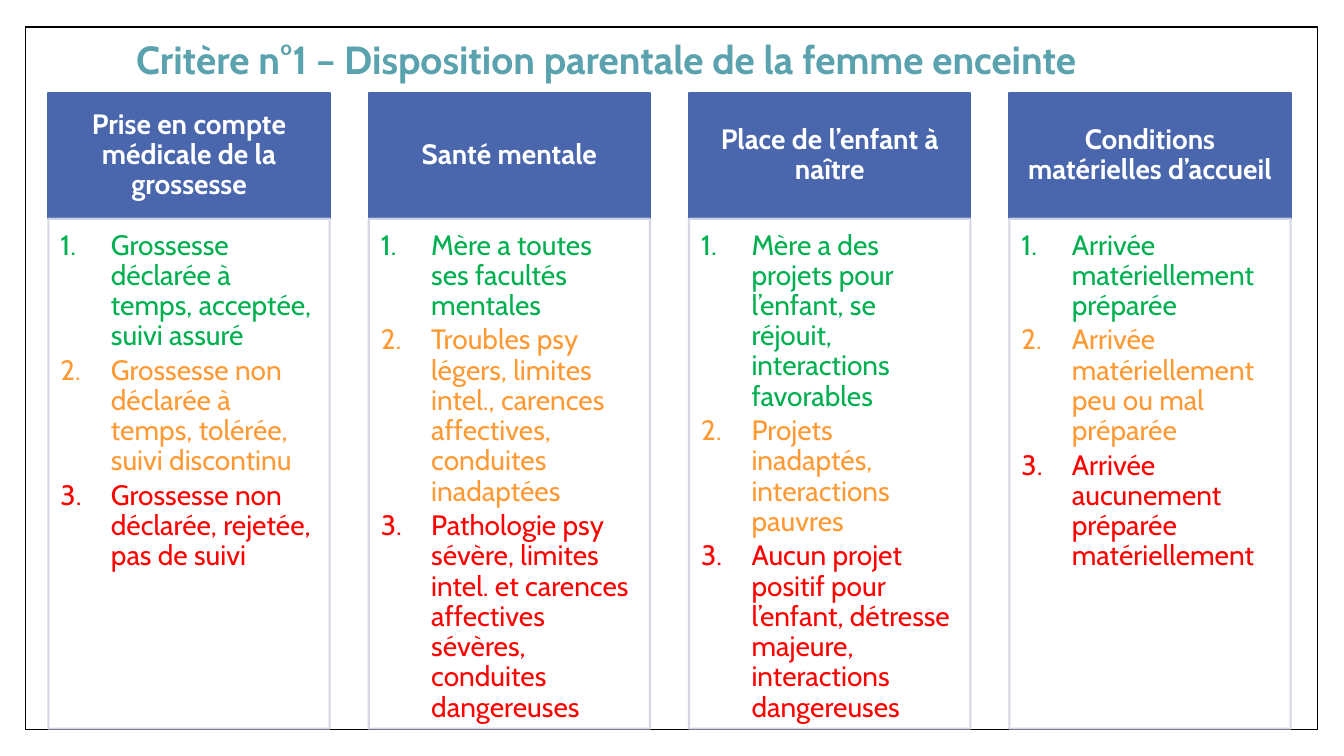
from lxml import etree
from pptx import Presentation
from pptx.dml.color import RGBColor
from pptx.enum.shapes import MSO_SHAPE
from pptx.enum.text import MSO_ANCHOR, MSO_AUTO_SIZE, PP_ALIGN
from pptx.oxml.ns import qn
from pptx.util import Inches, Pt

RECT = MSO_SHAPE.RECTANGLE
TOP, MIDDLE = MSO_ANCHOR.TOP, MSO_ANCHOR.MIDDLE
LEFT, CENTER = PP_ALIGN.LEFT, PP_ALIGN.CENTER

BLUE, PALE, WHITE, TEAL = "4A66AC", "D0D3E3", "FFFFFF", "5AA2AE"
LEVEL_COLORS = ["00B050", "FF9933", "FF0000"]

COLUMNS = [
    ("Prise en compte médicale de la grossesse", [
        "Grossesse déclarée à temps, acceptée, suivi assuré",
        "Grossesse non déclarée à temps, tolérée, suivi discontinu",
        "Grossesse non déclarée, rejetée, pas de suivi"]),
    ("Santé mentale", [
        "Mère a toutes ses facultés mentales",
        "Troubles psy légers, limites intel., carences affectives, conduites inadaptées",
        "Pathologie psy sévère, limites intel. et carences affectives sévères, "
        "conduites dangereuses"]),
    ("Place de l’enfant à naître", [
        "Mère a des projets pour l’enfant, se réjouit, interactions favorables",
        "Projets inadaptés, interactions pauvres",
        "Aucun projet positif pour l’enfant, détresse majeure, interactions dangereuses"]),
    ("Conditions matérielles d’accueil", [
        "Arrivée matériellement préparée",
        "Arrivée matériellement peu ou mal préparée",
        "Arrivée aucunement préparée matériellement"]),
]


def add_box(x, y, w, h, fill, line, weight, anchor=MIDDLE, insets=(0.16, 0.09, 0.16, 0.09)):
    sp = s.shapes.add_shape(RECT, Inches(x), Inches(y), Inches(w), Inches(h))
    sp.shadow.inherit = False
    sp.fill.solid()
    sp.fill.fore_color.rgb = RGBColor.from_string(fill)
    sp.line.color.rgb = RGBColor.from_string(line)
    sp.line.width = Pt(weight)
    tf = sp.text_frame
    tf.word_wrap = True
    tf.vertical_anchor = anchor
    tf.margin_left, tf.margin_top, tf.margin_right, tf.margin_bottom = map(Inches, insets)
    return sp


def write(p, text, size, color, bold, align, after=0):
    p.alignment = align
    p.line_spacing = 0.9
    p.space_after = Pt(after)
    r = p.add_run()
    r.text = text
    r.font.name = "Cabin"
    r.font.size = Pt(size)
    r.font.bold = bold
    r.font.color.rgb = RGBColor.from_string(color)


prs = Presentation()
prs.slide_width, prs.slide_height = Inches(13.33), Inches(7.5)
s = prs.slides.add_slide(prs.slide_layouts[5])

# Title, with the page frame behind it
title = s.shapes.title
title.left, title.top = Inches(1.25), Inches(-0.13)
title.width, title.height = Inches(10.8), Inches(1.48)
tf = title.text_frame
tf.word_wrap = True
tf.auto_size = MSO_AUTO_SIZE.NONE
tf.vertical_anchor = MIDDLE
write(tf.paragraphs[0], "Critère n°1 – Disposition parentale de la femme enceinte",
      28, TEAL, True, LEFT)

frame = add_box(0.25, 0.27, 12.82, 6.97, WHITE, "000000", 1)
title._element.addprevious(frame._element)

# Four criteria: a header over a list graded from green to red
for i, (heading, levels) in enumerate(COLUMNS):
    x = 0.48 + i * 3.177
    header = add_box(x, 0.92, 2.79, 1.24, BLUE, BLUE, 1.5)
    write(header.text_frame.paragraphs[0], heading, 20, WHITE, True, CENTER)

    body = add_box(x, 2.17, 2.79, 5.06, WHITE, PALE, 1.5, TOP, (0.12, 0.12, 0.16, 0.17))
    for color in body._element.spPr.iter(qn("a:srgbClr")):
        etree.SubElement(color, qn("a:alpha"), val="90000")
    tf = body.text_frame
    for j, (text, color) in enumerate(zip(levels, LEVEL_COLORS)):
        p = tf.add_paragraph() if j else tf.paragraphs[0]
        p.level = 1
        write(p, text, 20, color, False, LEFT, 3)
        pPr = p._p.get_or_add_pPr()
        pPr.set("marL", str(Inches(0.5)))
        pPr.set("indent", str(Inches(-0.5)))
        etree.SubElement(pPr, qn("a:buFont"), typeface="+mj-lt")
        etree.SubElement(pPr, qn("a:buAutoNum"), type="arabicPeriod")

prs.save("out.pptx")
